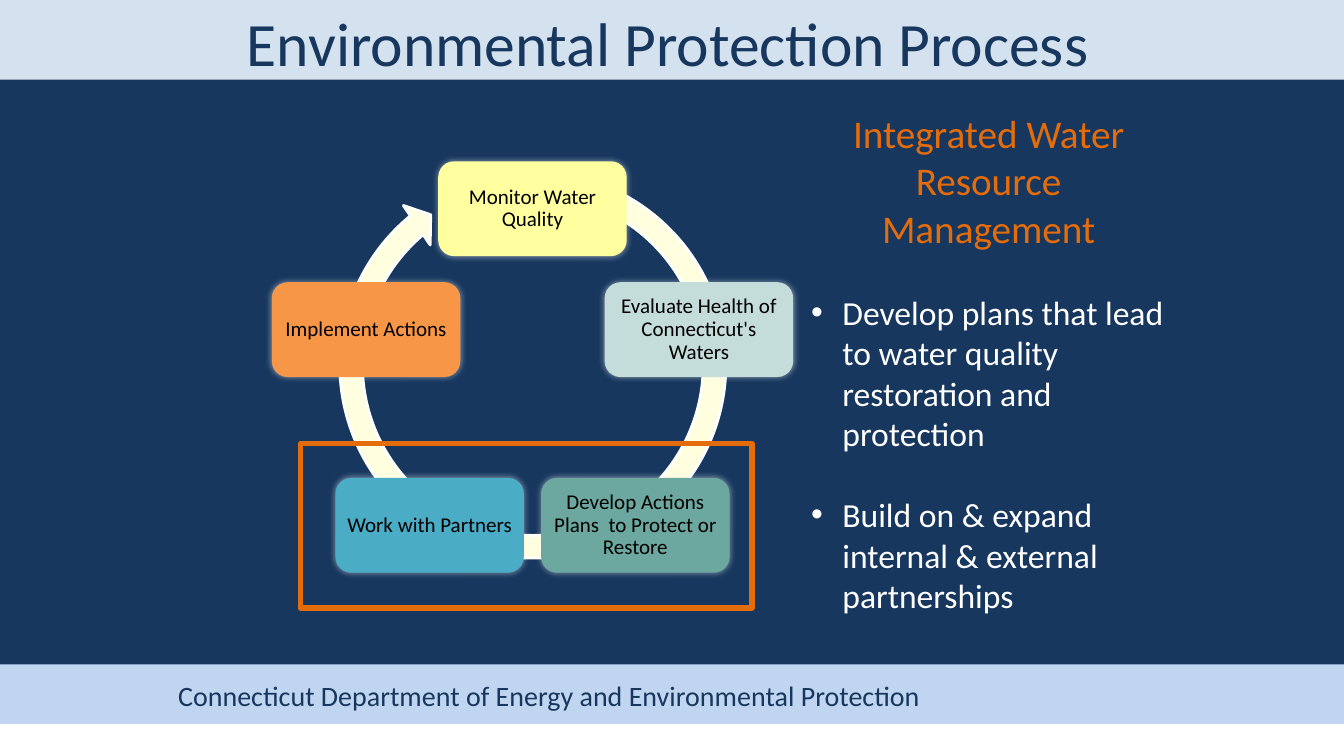
"""Build the Environmental Protection Process slide."""
from math import cos, radians, sin

from lxml.etree import SubElement
from pptx import Presentation
from pptx.dml.color import RGBColor
from pptx.enum.shapes import MSO_SHAPE
from pptx.enum.text import MSO_ANCHOR, PP_ALIGN
from pptx.oxml.ns import qn
from pptx.util import Cm, Pt

NAVY, ORANGE, WHITE = "17375E", "E46C0A", "FFFFFF"


def add_box(kind, left, top, width, height, fill=None, line=None, line_width=0):
    shape = slide.shapes.add_shape(kind, Cm(left), Cm(top), Cm(width), Cm(height))
    shape.shadow.inherit = False
    for part, color in ((shape.fill, fill), (shape.line.fill, line)):
        if color:
            part.solid()
            part.fore_color.rgb = RGBColor.from_string(color)
        else:
            part.background()
    if line:
        shape.line.width = Pt(line_width)
    return shape


def write(paragraph, text, size, color, align=PP_ALIGN.LEFT, spacing=None,
          before=None, margin=0, indent=0, bullet=None):
    properties = paragraph._p.get_or_add_pPr()
    properties.set("marL", str(Cm(margin)))
    properties.set("indent", str(Cm(indent)))
    if bullet:
        SubElement(properties, qn("a:buFont"), typeface="Arial")
        SubElement(properties, qn("a:buChar"), char=bullet)
    paragraph.alignment = align
    if spacing:
        paragraph.line_spacing = spacing
    if before:
        paragraph.space_before = Pt(before)
    run = paragraph.add_run()
    run.text = text
    run.font.name = "Calibri"
    run.font.size = Pt(size)
    run.font.color.rgb = RGBColor.from_string(color)


presentation = Presentation()
presentation.slide_width, presentation.slide_height = Cm(33.87), Cm(19.05)
slide = presentation.slides.add_slide(presentation.slide_layouts[6])
slide.background.fill.solid()
slide.background.fill.fore_color.rgb = RGBColor.from_string(NAVY)

for top, height, color in ((17.98, 1.07, WHITE), (0, 2.01, "D4E1EE"), (16.74, 1.5, "C0D5F0")):
    add_box(MSO_SHAPE.RECTANGLE, 0, top, 33.87, height, fill=color)

labels = (
    ("Connecticut Department of Energy and Environmental Protection", 4.24, 16.97, 29.16, 1.11, 20),
    ("Environmental Protection Process", 5.97, 0, 22.86, 3.18, 44),
)
for text, left, top, width, height, size in labels:
    label = slide.shapes.add_textbox(Cm(left), Cm(top), Cm(width), Cm(height))
    label.text_frame.word_wrap = True
    write(label.text_frame.paragraphs[0], text, size, NAVY)

cycle = add_box(MSO_SHAPE.CIRCULAR_ARROW, 8.25, 4.02, 10.36, 10.36,
                fill="FFFFDF", line=WHITE, line_width=2)
for index, value in enumerate((0.055, 3.307, 138.179, 173.605, 0.058)):
    cycle.adjustments[index] = value

steps = (
    ("Monitor Water Quality", "FFFF9F"),
    ("Evaluate Health of Connecticut's Waters", "C5DDDA"),
    ("Develop Actions Plans  to Protect or Restore", "6CA8A0"),
    ("Work with Partners", "4BACC6"),
    ("Implement Actions", "F79646"),
)
center_x, center_y, radius = 13.42, 9.67, 4.41
step_width, step_height = 4.75, 2.39
for index, (text, color) in enumerate(steps):
    angle = radians(index * 360 / len(steps))
    step = add_box(MSO_SHAPE.ROUNDED_RECTANGLE,
                   center_x + radius * sin(angle) - step_width / 2,
                   center_y - radius * cos(angle) - step_height / 2,
                   step_width, step_height, fill=color)
    effects = step._element.spPr.find(qn("a:effectLst"))
    glow = SubElement(effects, qn("a:outerShdw"), blurRad=str(Pt(5)), dist="0", dir="0")
    glow_color = SubElement(glow, qn("a:srgbClr"), val=WHITE)
    SubElement(glow_color, qn("a:alpha"), val="50000")
    frame = step.text_frame
    frame.word_wrap = True
    frame.vertical_anchor = MSO_ANCHOR.MIDDLE
    frame.margin_left = frame.margin_right = frame.margin_top = frame.margin_bottom = Cm(0.15)
    write(frame.paragraphs[0], text, 15, "000000", align=PP_ALIGN.CENTER, spacing=0.9)

add_box(MSO_SHAPE.RECTANGLE, 7.57, 11.18, 11.38, 4.14, line=ORANGE, line_width=4)

body = slide.shapes.add_textbox(Cm(18.92), Cm(2.64), Cm(10.72), Cm(13.84)).text_frame
body.word_wrap = True
write(body.paragraphs[0], "Integrated Water Resource Management", 28, ORANGE,
      align=PP_ALIGN.CENTER, margin=1.27)
for text in ("Develop plans that lead to water quality restoration and protection",
             "Build on & expand internal & external partnerships"):
    write(body.add_paragraph(), text, 24, WHITE, before=29.3,
          margin=2.06, indent=-0.79, bullet="•")

presentation.save("out.pptx")
